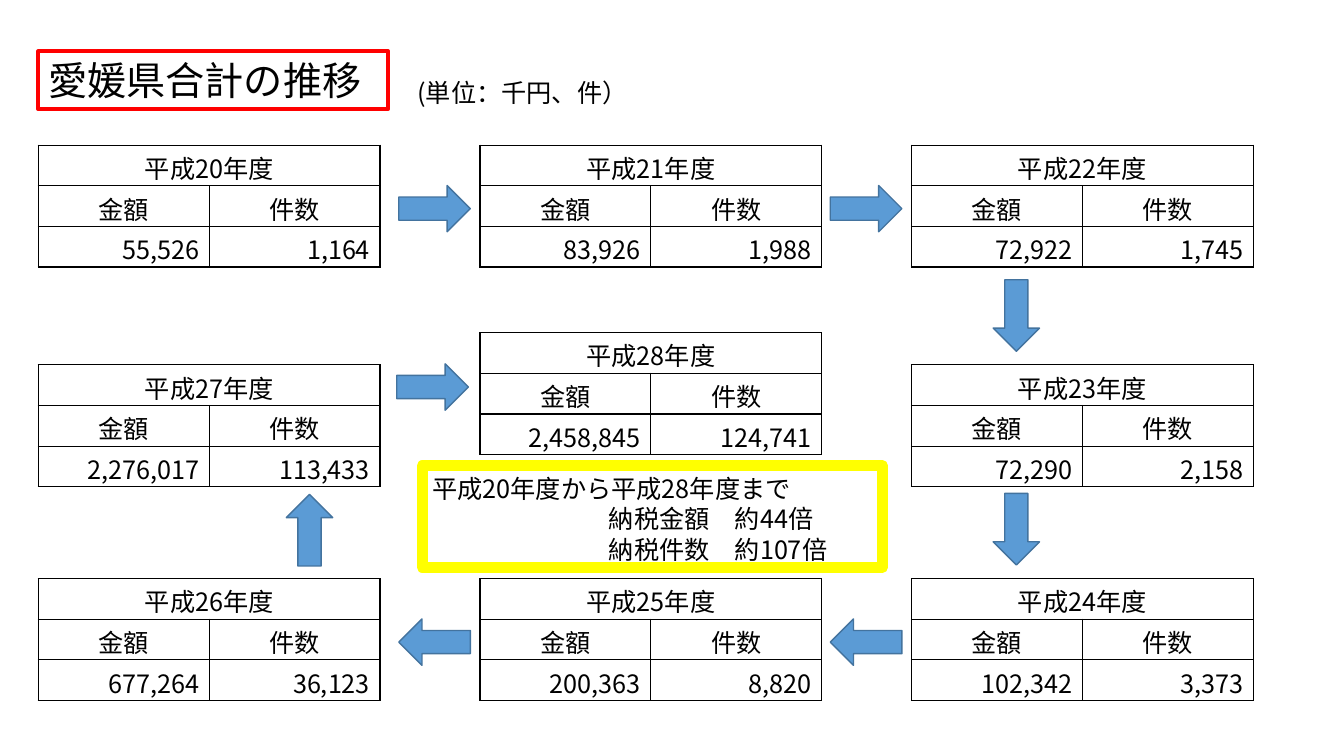
from lxml.etree import SubElement
from pptx import Presentation
from pptx.dml.color import RGBColor
from pptx.enum.shapes import MSO_SHAPE
from pptx.enum.text import MSO_ANCHOR, PP_ALIGN
from pptx.oxml.ns import qn
from pptx.util import Inches, Pt

COLORS = {"ink": "000000", "paper": "FFFFFF", "title": "FF0000",
          "note": "FFFF00", "arrow": "5B9BD5", "arrow_edge": "43739E"}
FONT = "Noto Sans CJK JP"
COLUMNS = (0.38, 4.76, 9.04)
ROWS = (1.44, 3.62, 5.74)
CENTER_ROW = 3.3
TABLE_WIDTH, TABLE_HEIGHT = 3.39, 1.21
ARROW_WIDTH, ARROW_HEIGHT = 0.71, 0.46

YEARS = (
    ("平成20年度", "55,526", "1,164", COLUMNS[0], ROWS[0]),
    ("平成21年度", "83,926", "1,988", COLUMNS[1], ROWS[0]),
    ("平成22年度", "72,922", "1,745", COLUMNS[2], ROWS[0]),
    ("平成23年度", "72,290", "2,158", COLUMNS[2], ROWS[1]),
    ("平成24年度", "102,342", "3,373", COLUMNS[2], ROWS[2]),
    ("平成25年度", "200,363", "8,820", COLUMNS[1], ROWS[2]),
    ("平成26年度", "677,264", "36,123", COLUMNS[0], ROWS[2]),
    ("平成27年度", "2,276,017", "113,433", COLUMNS[0], ROWS[1]),
    ("平成28年度", "2,458,845", "124,741", COLUMNS[1], CENTER_ROW),
)
NOTE_LINES = (("平成20年度から平成28年度まで", 0),
              ("納税金額　約44倍", 1.75), ("納税件数　約107倍", 1.75))


def color(name):
    """Return a named colour."""
    return RGBColor.from_string(COLORS[name])


def write(para, text, size=18, align=PP_ALIGN.LEFT):
    """Add one run of text to a paragraph."""
    para.alignment = align
    span = para.add_run()
    span.text = text
    span.font.size = Pt(size)
    span.font.name = FONT
    span.font.color.rgb = color("ink")
    SubElement(span.font._element, qn("a:ea"), typeface=FONT)


def set_frame(frame, top=0, anchor=MSO_ANCHOR.MIDDLE):
    """Wrap a text frame and set its vertical margins and anchor."""
    frame.word_wrap = True
    frame.margin_top, frame.margin_bottom = Inches(top), 0
    frame.vertical_anchor = anchor


def add_figure(page, kind, place, fill, edge, width):
    """Add a flat preset shape; a fill of None leaves it open."""
    shape = page.shapes.add_shape(kind, *map(Inches, place))
    shape.shadow.inherit = False
    if fill:
        shape.fill.solid()
        shape.fill.fore_color.rgb = color(fill)
    else:
        shape.fill.background()
    shape.line.color.rgb = color(edge)
    shape.line.width = Pt(width)
    return shape


def add_arrow(page, center_x, center_y, turn=0):
    """Add a block arrow around a centre, turned clockwise."""
    place = (center_x - ARROW_WIDTH / 2, center_y - ARROW_HEIGHT / 2,
             ARROW_WIDTH, ARROW_HEIGHT)
    arrow = add_figure(page, MSO_SHAPE.RIGHT_ARROW, place, "arrow", "arrow_edge", 1)
    arrow.rotation = turn


def style_cell(cell):
    """Give a cell an open fill, thin borders and its margins."""
    cell.margin_top, cell.margin_bottom = Inches(0.04), 0
    cell.vertical_anchor = MSO_ANCHOR.MIDDLE
    properties = cell._tc.get_or_add_tcPr()
    for side in ("lnL", "lnR", "lnT", "lnB"):
        border = SubElement(properties, qn(f"a:{side}"), w=str(Pt(1)))
        paint = SubElement(border, qn("a:solidFill"))
        SubElement(paint, qn("a:srgbClr"), val=COLORS["ink"])
    cell.fill.background()


def add_year(page, year, amount, count, left, top):
    """Add the table of one fiscal year."""
    place = map(Inches, (left, top, TABLE_WIDTH, TABLE_HEIGHT))
    table = page.shapes.add_table(3, 2, *place).table
    table.first_row = table.horz_banding = False
    for cell in table.iter_cells():
        style_cell(cell)
    table.cell(0, 0).merge(table.cell(0, 1))
    lines = (((year,), PP_ALIGN.CENTER), (("金額", "件数"), PP_ALIGN.CENTER),
             ((amount, count), PP_ALIGN.RIGHT))
    for row, (texts, align) in enumerate(lines):
        for column, text in enumerate(texts):
            write(table.cell(row, column).text_frame.paragraphs[0], text, align=align)


def add_heading(page):
    """Add the framed title and the unit caption."""
    title = add_figure(page, MSO_SHAPE.RECTANGLE, (COLUMNS[0], 0.51, 3.47, 0.57),
                       "paper", "title", 3)
    caption = page.shapes.add_textbox(*map(Inches, (4.04, 0.72, 2.51, 0.4)))
    for box, text, size in ((title, "愛媛県合計の推移", 28),
                            (caption, "(単位：千円、件）", 18)):
        set_frame(box.text_frame)
        write(box.text_frame.paragraphs[0], text, size)


def add_note(page):
    """Add the framed summary of growth."""
    box = add_figure(page, MSO_SHAPE.RECTANGLE, (4.19, 4.62, 4.56, 1.01),
                     None, "note", 8)
    frame = box.text_frame
    set_frame(frame, 0.07, MSO_ANCHOR.TOP)
    for index, (text, indent) in enumerate(NOTE_LINES):
        para = frame.add_paragraph() if index else frame.paragraphs[0]
        para.line_spacing = Pt(21.8)
        para._p.get_or_add_pPr().set("marL", str(Inches(indent)))
        write(para, text)


def main():
    """Build the slide and save it."""
    deck = Presentation()
    deck.slide_width, deck.slide_height = Inches(13.33), Inches(7.5)
    page = deck.slides.add_slide(deck.slide_layouts[6])
    add_heading(page)
    for year in YEARS:
        add_year(page, *year)
    for left in COLUMNS[1:]:
        for top, turn in ((ROWS[0], 0), (ROWS[2], 180)):
            add_arrow(page, left - 0.45, top + 0.63, turn)
    add_arrow(page, COLUMNS[1] - 0.47, ROWS[1] + 0.22)
    for top in ROWS[1:]:
        add_arrow(page, COLUMNS[2] + 1.04, top - 0.49, 90)
    add_arrow(page, COLUMNS[0] + 2.69, ROWS[2] - 0.48, 270)
    add_note(page)
    deck.save("out.pptx")


if __name__ == "__main__":
    main()
